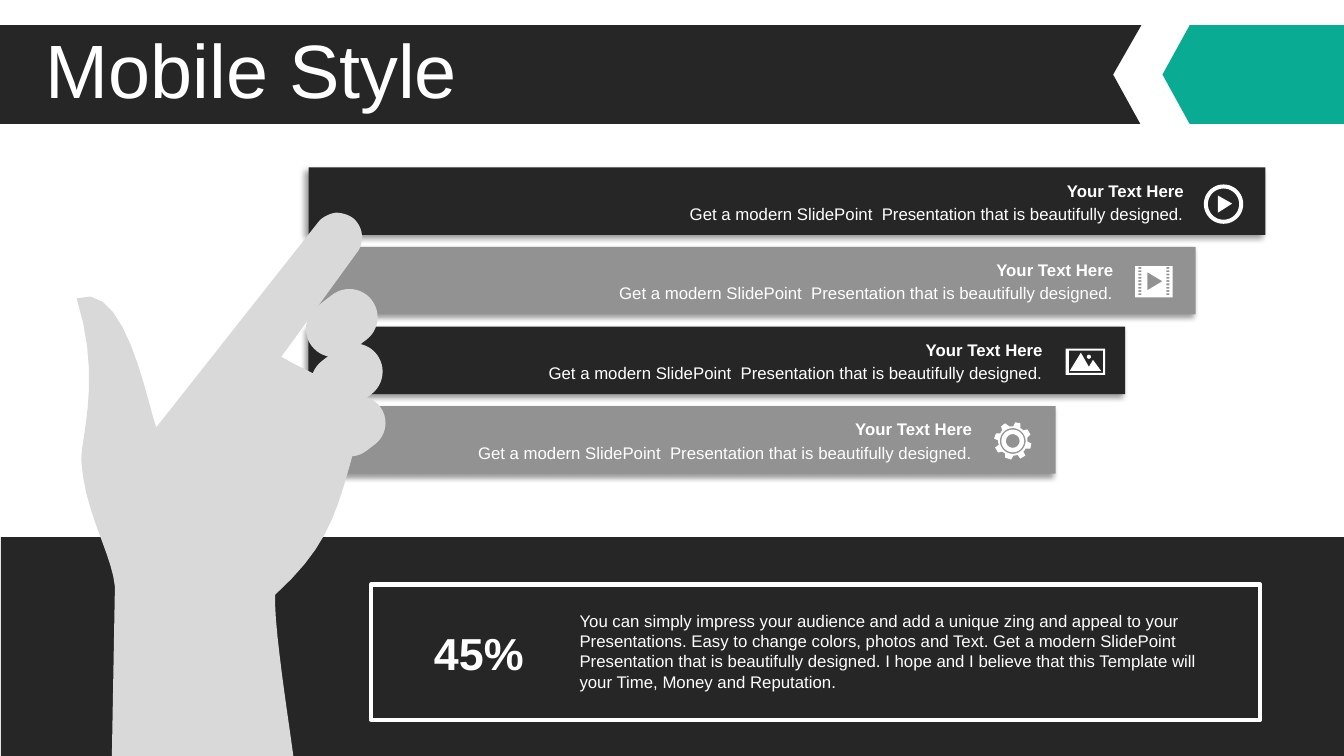
from dataclasses import dataclass
from math import cos, pi, sin
from typing import NamedTuple

from lxml import etree
from pptx import Presentation
from pptx.dml.color import RGBColor
from pptx.enum.shapes import MSO_SHAPE
from pptx.enum.text import MSO_ANCHOR, MSO_AUTO_SIZE, PP_ALIGN
from pptx.oxml.ns import qn
from pptx.util import Pt

RECT, ROUND = MSO_SHAPE.RECTANGLE, MSO_SHAPE.ROUNDED_RECTANGLE
LEFT, MID, RIGHT = PP_ALIGN.LEFT, PP_ALIGN.CENTER, PP_ALIGN.RIGHT
TOP, MIDDLE = MSO_ANCHOR.TOP, MSO_ANCHOR.MIDDLE
FIXED, GROW = MSO_AUTO_SIZE.NONE, MSO_AUTO_SIZE.SHAPE_TO_FIT_TEXT
PX = 9144  # one px is a hundredth of an inch
STEPS = 10  # chords per curve

Contour = list[tuple[float, ...]]  # (x, y) is a line, six values are a cubic curve


@dataclass(frozen=True)
class Theme:
    dark: str = "262626"
    grey: str = "929292"
    skin: str = "D9D9D9"
    teal: str = "09AB93"
    white: str = "FFFFFF"
    font: str = "Arial"
    title: int = 54
    figure: int = 32
    text: int = 12


class Box(NamedTuple):
    x: int
    y: int
    w: int
    h: int

    def emu(self) -> list[int]:
        return [v * PX for v in self]


class Bar(NamedTuple):
    fill: str
    icon: list[Contour]


THEME = Theme()
HEAD = "Your Text Here"
LINE = "Get a modern SlidePoint  Presentation that is beautifully designed."
PITCH = "You can simply impress your audience and add a unique zing and appeal to your " \
    "Presentations. Easy to change colors, photos and Text. Get a modern SlidePoint " \
    "Presentation that is beautifully designed. I hope and I believe that this Template " \
    "will your Time, Money and Reputation."


def disc(x: float, y: float, r: float) -> Contour:
    return [(x + r * cos(a * pi / 24), y + r * sin(a * pi / 24)) for a in range(48)]


def block(x: float, y: float, w: float, h: float) -> Contour:
    return [(x, y), (x + w, y), (x + w, y + h), (x, y + h)]


BANNER = [(0, 25), (1132, 25), (1104, 74), (1131, 123), (0, 123)]
ARROW = [(1180, 25), (1333, 25), (1333, 123), (1180, 123), (1153, 74)]
HAND = [
    (333, 211), (339, 211, 346, 213, 351, 217), (361, 226, 362, 242, 353, 252),
    (279, 354), (314, 375, 365, 388, 358, 422), (335, 502, 332, 536, 273, 590),
    (271, 618, 287, 720, 291, 750), (111, 750), (114, 582),
    (111, 550, 85, 510, 81, 461), (77, 442, 103, 381, 76, 296),
    (124, 277, 145, 396, 155, 424), (316, 220), (320, 215, 327, 212, 333, 211)]
FINGERS = [Box(311, 283, 56, 75), Box(316, 337, 56, 75), Box(325, 391, 53, 64)]

PLAY = [[(1208, 194), (1222, 202), (1208, 211)],
        disc(1213.5, 202.5, 15.5), disc(1213.5, 202.5, 19.5)]
FILM = [block(1126, 264, 37, 31), [(1138, 270), (1138, 288), (1153, 279)]]
FILM += [block(x, 265 + 3.25 * row, 3, 1.75) for x in (1129, 1157) for row in range(9)]
PHOTO = [block(1057, 346, 39, 26), block(1060, 348, 34, 22), disc(1080, 354, 2),
         [(1072, 350), (1080, 364), (1084, 357), (1092, 368), (1061, 368)]]
TEETH = [
    (1012, 420), (1012, 425), (1013, 425, 1014, 426, 1015, 427), (1019, 426),
    (1022, 431), (1019, 434), (1019, 435, 1019, 436, 1019, 438), (1023, 440),
    (1022, 445), (1017, 445), (1017, 446, 1016, 447, 1015, 448), (1017, 452),
    (1012, 455), (1009, 451), (1008, 452, 1006, 452, 1005, 452), (1003, 456),
    (997, 454), (997, 450), (996, 449, 995, 449, 994, 448), (990, 449),
    (987, 444), (991, 441), (990, 440, 990, 439, 990, 437), (986, 435),
    (988, 430), (992, 430), (993, 429, 993, 428, 994, 427), (993, 423),
    (997, 420), (1001, 423), (1002, 423, 1003, 423, 1005, 423), (1007, 419)]
GEAR = [TEETH] + [disc(1004.5, 437.5, r) for r in (12.75, 11.25, 6.75)]

BARS = [Bar(THEME.dark, PLAY), Bar(THEME.grey, FILM),
        Bar(THEME.dark, PHOTO), Bar(THEME.grey, GEAR)]


def paint(shape, fill: str):
    shape.shadow.inherit = False
    shape.fill.solid()
    shape.fill.fore_color.rgb = RGBColor.from_string(fill)
    shape.line.fill.background()
    return shape


def panel(shapes, kind, box: Box, fill: str):
    return paint(shapes.add_shape(kind, *box.emu()), fill)


def flatten(contour: Contour) -> list[tuple[float, float]]:
    """Turn the curves into chords and the lengths into EMU."""
    dots = [contour[0]]
    for part in contour[1:]:
        if len(part) == 2:
            dots.append(part)
            continue
        ends = (dots[-1], part[:2], part[2:4], part[4:])
        for step in range(1, STEPS + 1):
            t = step / STEPS
            mix = ((1 - t) ** 3, 3 * t * (1 - t) ** 2, 3 * t * t * (1 - t), t ** 3)
            dots.append(tuple(sum(m * p[axis] for m, p in zip(mix, ends))
                              for axis in (0, 1)))
    return [(x * PX, y * PX) for x, y in dots]


def outline(shapes, contours: list[Contour], fill: str) -> None:
    """Draw all contours as one freeform; inner ones are holes."""
    first, *rest = [flatten(c) for c in contours]
    form = shapes.build_freeform(*first[0], scale=1.0)
    form.add_line_segments(first[1:], close=True)
    for dots in rest:
        form.move_to(*dots[0])
        form.add_line_segments(dots[1:], close=True)
    paint(form.convert_to_shape(), fill)


def cast(shape) -> None:
    """Give the shape a soft shadow to the lower left."""
    effects = shape._element.spPr.find(qn("a:effectLst"))
    shade = etree.SubElement(effects, qn("a:outerShdw"), blurRad=str(Pt(4)),
                             dist=str(Pt(3)), dir=str(135 * 60000),
                             algn="tr", rotWithShape="0")
    tint = etree.SubElement(shade, qn("a:srgbClr"), val="000000")
    etree.SubElement(tint, qn("a:alpha"), val="40000")


def write(shape, text: str, size: int, bold: bool = False, align=LEFT,
          anchor=TOP, fit=GROW):
    frame = shape.text_frame
    frame.text = text
    para = frame.paragraphs[0]
    font = para.runs[0].font
    looks = {
        frame: {"word_wrap": True, "auto_size": fit, "vertical_anchor": anchor},
        para: {"alignment": align},
        font: {"name": THEME.font, "size": Pt(size), "bold": bold},
    }
    for target, values in looks.items():
        for name, value in values.items():
            setattr(target, name, value)
    font.color.rgb = RGBColor.from_string(THEME.white)
    return para


def label(shapes, box: Box, *args, **looks) -> None:
    write(shapes.add_textbox(*box.emu()), *args, **looks)


def head(shapes) -> None:
    outline(shapes, [BANNER], THEME.dark)
    outline(shapes, [ARROW], THEME.teal)
    title = shapes.title
    title.left, title.top, title.width, title.height = Box(35, 34, 1266, 79).emu()
    para = write(title, "Mobile Style", THEME.title, anchor=MIDDLE, fit=FIXED)
    para.line_spacing, para.space_before = 0.9, Pt(10)
    shapes._spTree.append(title._element)  # in front of the banner


def main() -> None:
    deck = Presentation()
    deck.slide_width, deck.slide_height = 1333 * PX, 750 * PX
    shapes = deck.slides.add_slide(deck.slide_layouts[5]).shapes

    panel(shapes, RECT, Box(1, 533, 1332, 217), THEME.dark)
    for row, bar in enumerate(BARS):
        box = Box(306, 166 + 79 * row, 949 - 139 * row // 2, 67)
        cast(panel(shapes, RECT, box, bar.fill))
    outline(shapes, [HAND], THEME.skin)
    head(shapes)

    for row, bar in enumerate(BARS):
        x, y = 645 - 70 * row, 174 + 79 * row
        label(shapes, Box(x, y + 23, 539, 30), LINE, THEME.text, align=RIGHT)
        label(shapes, Box(x, y, 539, 30), HEAD, THEME.text, bold=True, align=RIGHT)
        outline(shapes, bar.icon, THEME.white)
    for box in FINGERS:
        finger = panel(shapes, ROUND, box, THEME.skin)
        finger.adjustments[0] = 0.5
        finger.rotation = 52.5

    border = panel(shapes, RECT, Box(368, 580, 882, 134), THEME.dark)
    border.fill.background()
    border.line.color.rgb = RGBColor.from_string(THEME.white)
    border.line.width = Pt(3)
    label(shapes, Box(412, 615, 126, 64), "45%", THEME.figure, bold=True,
          align=MID, anchor=MIDDLE)
    label(shapes, Box(565, 601, 647, 91), PITCH, THEME.text)
    deck.save("out.pptx")


if __name__ == "__main__":
    main()
